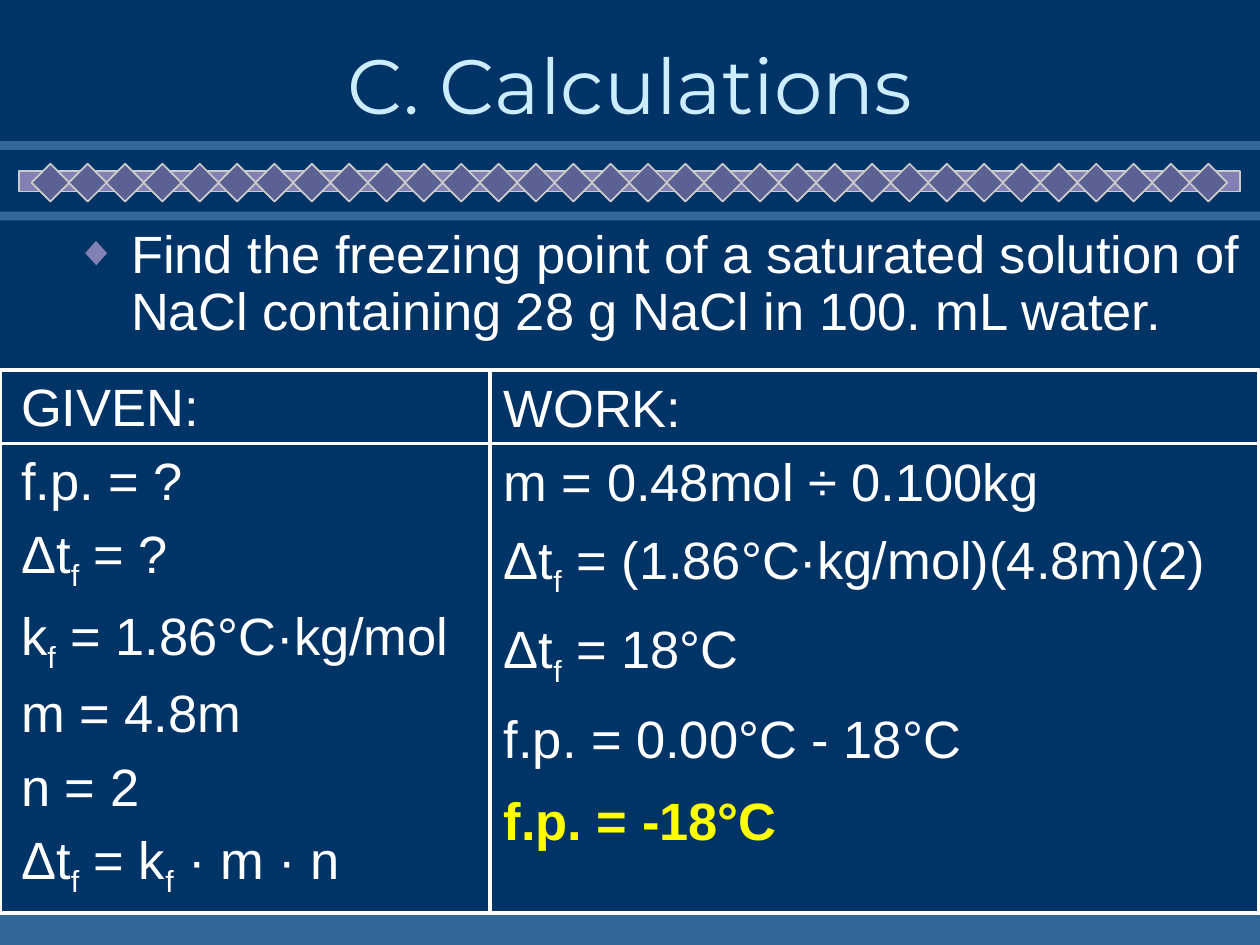
from dataclasses import dataclass

from lxml import etree
from pptx import Presentation
from pptx.dml.color import RGBColor
from pptx.enum import shapes, text
from pptx.oxml import ns, parse_xml
from pptx.util import Inches, Pt


@dataclass(frozen=True)
class Theme:
    background: str = "003366"
    band: str = "336699"
    rail: str = "8381B3"
    diamond: str = "5B6192"
    edge: str = "CBCBCB"
    title: str = "CCECFF"
    shadow: str = "000000"
    body: str = "FFFFFF"
    answer: str = "FFFF00"
    title_font: str = "Montserrat"
    body_font: str = "Arial"
    title_size: int = 44
    body_size: int = 30


theme = Theme()
XMLNS = ns.nsdecls("a")


def add_ornament(kind, box, fill=None, line=None, width=1):
    shape = page.shapes.add_shape(kind, *map(Inches, box))
    shape.shadow.inherit = False
    if fill:
        shape.fill.solid()
        shape.fill.fore_color.rgb = RGBColor.from_string(fill)
    else:
        shape.fill.background()
    if line:
        shape.line.color.rgb = RGBColor.from_string(line)
        shape.line.width = Pt(width)
    else:
        shape.line.fill.background()


def style_span(span, color=theme.body, font=theme.body_font, size=theme.body_size):
    span.font.name = font
    span.font.size = Pt(size)
    span.font.color.rgb = RGBColor.from_string(color)


deck = Presentation()
deck.slide_width, deck.slide_height = Inches(10), Inches(7.5)
page = deck.slides.add_slide(deck.slide_layouts[1])
page.background.fill.solid()
page.background.fill.fore_color.rgb = RGBColor.from_string(theme.background)

# Horizontal bands and the rail of diamonds
for top, height in ((1.12, 0.07), (1.68, 0.07), (7.25, 0.25)):
    add_ornament(shapes.MSO_SHAPE.RECTANGLE, (0, top, 10, height), theme.band)
add_ornament(shapes.MSO_SHAPE.RECTANGLE, (0.15, 1.36, 9.69, 0.16), theme.rail, theme.edge)
diamond_count, first_left, last_left = 32, 0.25, 9.44
step = (last_left - first_left) / (diamond_count - 1)
for index in range(diamond_count):
    add_ornament(shapes.MSO_SHAPE.DIAMOND, (first_left + index * step, 1.3, 0.3, 0.3),
                 theme.diamond, theme.edge)

# Title with a text shadow
title = page.shapes.title
title.left, title.top, title.width, title.height = map(Inches, (0.75, 0.25, 8.5, 0.83))
title.text_frame.text = "C. Calculations"
title.text_frame.auto_size = text.MSO_AUTO_SIZE.NONE
title.text_frame.vertical_anchor = text.MSO_ANCHOR.MIDDLE
para = title.text_frame.paragraphs[0]
para.alignment = text.PP_ALIGN.CENTER
span = para.runs[0]
style_span(span, theme.title, theme.title_font, theme.title_size)
span._r.rPr.find(ns.qn("a:solidFill")).addnext(parse_xml(
    f'<a:effectLst {XMLNS}><a:outerShdw dist="35921" dir="2700000">'
    f'<a:srgbClr val="{theme.shadow}"/></a:outerShdw></a:effectLst>'))

# Problem statement
body = page.placeholders[1]
body.left, body.top, body.width, body.height = map(Inches, (0.5, 1.76, 9.5, 1))
body.text_frame.text = ("Find the freezing point of a saturated solution of NaCl "
                        "containing 28 g NaCl in 100. mL water.")
body.text_frame.auto_size = text.MSO_AUTO_SIZE.NONE
para = body.text_frame.paragraphs[0]
para.line_spacing = 0.9
para.space_before = Pt(0)
style_span(para.runs[0])
properties = para._p.get_or_add_pPr()
properties.set("marL", str(Inches(0.44)))
properties.set("indent", str(-Inches(0.44)))
for bullet in (f'<a:buClr {XMLNS}><a:srgbClr val="{theme.rail}"/></a:buClr>',
               f'<a:buSzPct {XMLNS} val="80000"/>',
               f'<a:buFont {XMLNS} typeface="{theme.body_font}"/>',
               f'<a:buChar {XMLNS} char="◆"/>'):
    properties.append(parse_xml(bullet))

# Frame and dividers of the work area
add_ornament(shapes.MSO_SHAPE.RECTANGLE, (0, 2.94, 9.99, 4.31), line=theme.body, width=2.25)
for ends in ((3.89, 2.94, 3.89, 7.25), (0, 3.52, 10, 3.52)):
    divider = page.shapes.add_connector(shapes.MSO_CONNECTOR.STRAIGHT, *map(Inches, ends))
    divider.line.color.rgb = RGBColor.from_string(theme.body)
    divider.line.width = Pt(2.25)
    etree.SubElement(divider._element.spPr, ns.qn("a:effectLst"))

# Given values and work: (box, [(space before in percent, line)]); "_f" is a subscript f
ANSWER = "f.p. = -18°C"
blocks = (
    ((0.07, 2.92, 4.13, 2.74), [(20, "GIVEN:"), (20, "f.p. = ?"), (20, "Δt_f = ?"),
                                (20, "k_f = 1.86°C·kg/mol")]),
    ((0.07, 5.35, 3.84, 0.72), [(20, "m = 4.8m"), (20, "n = 2"), (20, "Δt_f = k_f · m · n")]),
    ((3.9, 2.93, 6.1, 1.31), [(20, "WORK:"), (20, "m = 0.48mol ÷ 0.100kg")]),
    ((3.9, 4.13, 6.1, 2.44), [(40, "Δt_f = (1.86°C·kg/mol)(4.8m)(2)"), (35, "Δt_f = 18°C"),
                              (35, "f.p. = 0.00°C - 18°C"), (35, ANSWER)]),
)
for place, lines in blocks:
    frame = page.shapes.add_textbox(*map(Inches, place)).text_frame
    frame.word_wrap = True
    for number, (gap, line) in enumerate(lines):
        para = frame.add_paragraph() if number else frame.paragraphs[0]
        para._p.get_or_add_pPr().append(parse_xml(
            f'<a:spcBef {XMLNS}><a:spcPct val="{gap * 1000}"/></a:spcBef>'))
        for position, piece in enumerate(line.replace("_f", "|f|").split("|")):
            span = para.add_run()
            span.text = piece
            style_span(span, theme.answer if line == ANSWER else theme.body)
            if line == ANSWER:
                span.font.bold = True
            if position % 2:
                span._r.rPr.set("baseline", "-25000")

deck.save("out.pptx")
